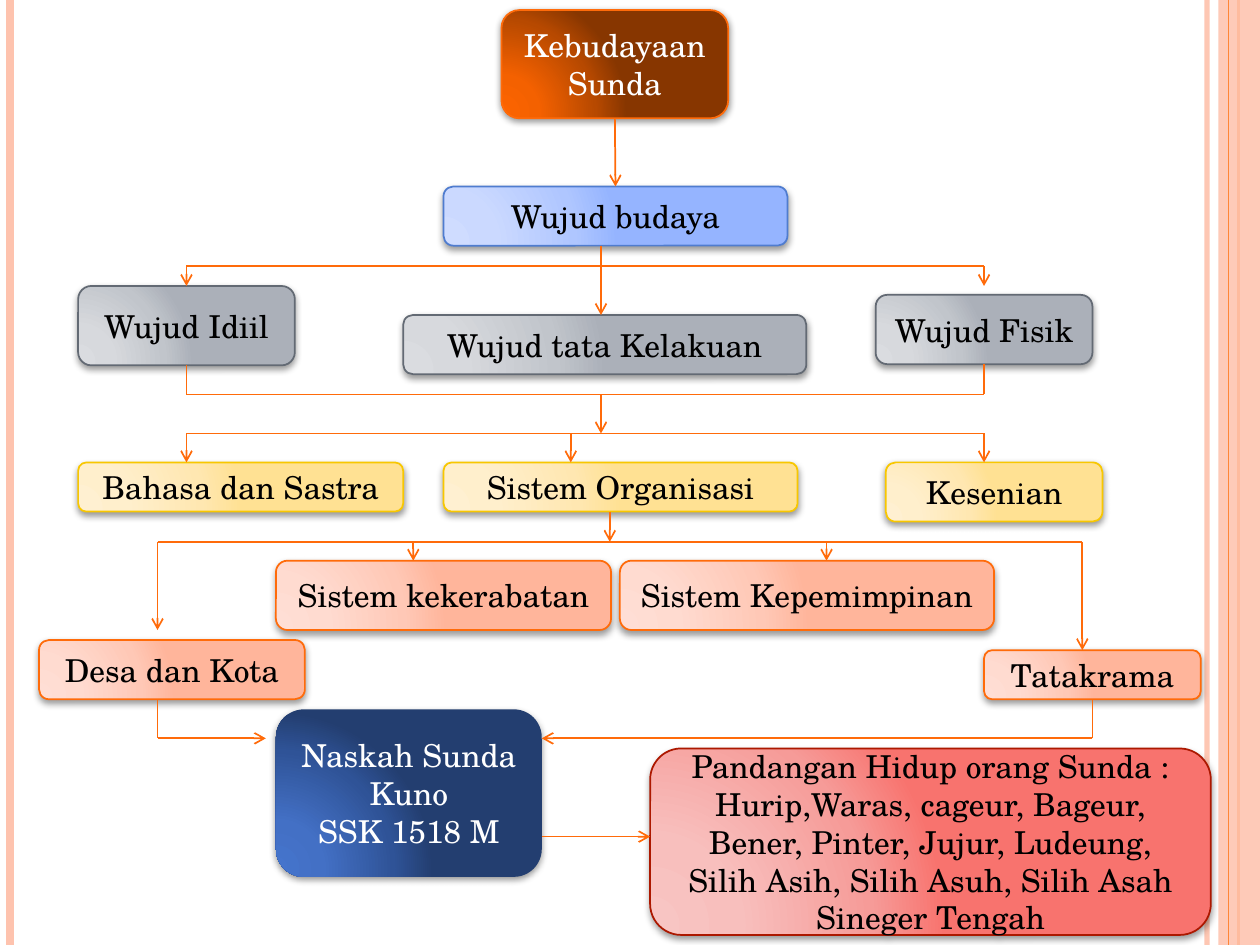
from lxml.etree import SubElement
from pptx import Presentation
from pptx.dml.color import RGBColor
from pptx.enum.shapes import MSO_CONNECTOR, MSO_SHAPE
from pptx.enum.text import MSO_ANCHOR, PP_ALIGN
from pptx.oxml import parse_xml
from pptx.oxml.ns import nsdecls, qn
from pptx.util import Pt

PX = 9144
FONT = "TeX Gyre Schola"
COLORS = {"black": "000000", "white": "FFFFFF", "orange": "FF6B0A", "pale": "FEC3AE",
          "rule": "FE8637", "blue": "4F7CCF", "gray": "636A74", "yellow": "F8C700",
          "red": "AC1800"}
GRADIENTS = {
    "brown": ["FD6400", "F46100", "B74900", "873600"],
    "blue": ["CFDCFF", "CBD9FF", "AFC6FF", "95B4FF"],
    "gray": ["DADCE0", "D7D9DD", "C1C5CB", "ABB0B9"],
    "yellow": ["FFF0D1", "FFEFCC", "FFE7B1", "FFE193"],
    "peach": ["FFDED5", "FFDBD0", "FFC8B6", "FFB59B"],
    "red": ["F8C5C3", "F8BFBD", "F69B98", "F8736E"],
    "navy": ["4574CC", "4370C5", "2F5397", "233E70"],
}
STOPS = [0, 30, 75, 100]

presentation = Presentation()
presentation.slide_width = 1000 * PX
presentation.slide_height = 750 * PX
slide = presentation.slides.add_slide(presentation.slide_layouts[6])


def add_box(text, box, gradient, line=None, color="black", shadow_alpha=40, shadow_distance=2):
    shape = slide.shapes.add_shape(MSO_SHAPE.ROUNDED_RECTANGLE, *[value * PX for value in box])
    stops = "".join(
        f'<a:gs pos="{position * 1000}"><a:srgbClr val="{value}"/></a:gs>'
        for position, value in zip(STOPS, GRADIENTS[gradient]))
    properties = shape._element.spPr
    properties.insert(2, parse_xml(
        f'<a:gradFill {nsdecls("a")} rotWithShape="1"><a:gsLst>{stops}</a:gsLst><a:path path="circle">'
        '<a:fillToRect l="5000" t="100000" r="120000" b="10000"/></a:path></a:gradFill>'))
    if line:
        shape.line.color.rgb = RGBColor.from_string(COLORS[line])
        shape.line.width = Pt(1)
    else:
        shape.line.fill.background()
    shape.shadow.inherit = False
    properties.find(qn("a:effectLst")).append(parse_xml(
        f'<a:outerShdw {nsdecls("a")} blurRad="{Pt(4)}" dist="{Pt(shadow_distance)}" dir="5400000" '
        f'rotWithShape="0"><a:srgbClr val="{COLORS["black"]}"><a:alpha val="{shadow_alpha * 1000}"/>'
        '</a:srgbClr></a:outerShdw>'))
    frame = shape.text_frame
    frame.word_wrap = True
    frame.vertical_anchor = MSO_ANCHOR.MIDDLE
    frame.text = text
    for paragraph in frame.paragraphs:
        paragraph.alignment = PP_ALIGN.CENTER
        font = paragraph.runs[0].font
        font.name = FONT
        font.size = Pt(18)
        font.color.rgb = RGBColor.from_string(COLORS[color])
    return shape


def add_line(points, color="orange", width=1, arrow=False, alpha=100, begin=None, end=None):
    connector = slide.shapes.add_connector(
        MSO_CONNECTOR.STRAIGHT, *[value * PX for value in points])
    connector.line.color.rgb = RGBColor.from_string(COLORS[color])
    connector.line.width = Pt(width)
    properties = connector._element.spPr
    if alpha < 100:
        SubElement(next(properties.iter(qn("a:srgbClr"))), qn("a:alpha"), val=str(alpha * 1000))
    if arrow:
        SubElement(properties.find(qn("a:ln")), qn("a:tailEnd"), type="arrow")
    SubElement(properties, qn("a:effectLst"))
    if begin:
        connector.begin_connect(*begin)
    if end:
        connector.end_connect(*end)


add_line((958, 0, 958, 750), color="pale", width=3, alpha=93)
add_line((8, 0, 8, 750), color="pale", width=4.5)
add_line((983, 0, 983, 750), color="rule", width=1.5)
band = slide.shapes.add_shape(MSO_SHAPE.RECTANGLE, 967 * PX, 0, 33 * PX, 750 * PX)
band.shadow.inherit = False
band.fill.solid()
band.fill.fore_color.rgb = RGBColor.from_string(COLORS["pale"])
SubElement(next(band._element.spPr.iter(qn("a:srgbClr"))), qn("a:alpha"), val="87000")
band.line.fill.background()
add_line((975, 0, 975, 750), color="rule", width=0.75)

culture = add_box("Kebudayaan Sunda", (398, 8, 180, 86), "brown", line="orange",
                  color="white", shadow_alpha=42, shadow_distance=1.6)
forms = add_box("Wujud budaya", (352, 148, 273, 47), "blue", line="blue")
physical = add_box("Wujud Fisik", (695, 234, 172, 55), "gray", line="gray")
add_box("Wujud tata Kelakuan", (320, 250, 320, 47), "gray", line="gray")
ideal = add_box("Wujud Idiil", (62, 227, 172, 63), "gray", line="gray")
for text, box in [
    ("Kesenian", (703, 367, 172, 47)),
    ("Sistem Organisasi", (352, 367, 281, 39)),
    ("Bahasa dan Sastra", (62, 367, 258, 39)),
]:
    add_box(text, box, "yellow", line="yellow")
manners = add_box("Tatakrama", (781, 516, 172, 39), "peach", line="orange")
for text, box in [
    ("Sistem Kepemimpinan", (492, 445, 297, 55)),
    ("Sistem kekerabatan", (219, 445, 266, 55)),
    ("Desa dan Kota", (31, 508, 211, 47)),
]:
    add_box(text, box, "peach", line="orange")
add_box("Pandangan Hidup orang Sunda : Hurip,Waras, cageur, Bageur, Bener, Pinter, Jujur, "
        "Ludeung, Silih Asih, Silih Asuh, Silih Asah Sineger Tengah",
        (516, 594, 445, 148), "red", line="red")
add_box("Naskah Sunda Kuno\nSSK 1518 M", (219, 563, 211, 133), "navy",
        color="white", shadow_alpha=42, shadow_distance=1.6)

add_line((488, 94, 488, 148), arrow=True, begin=(culture, 2), end=(forms, 0))
add_line((148, 211, 148, 227), arrow=True, end=(ideal, 0))
add_line((148, 290, 148, 313), begin=(ideal, 2))
add_line((781, 289, 781, 313), begin=(physical, 2))
add_line((867, 555, 867, 586), begin=(manners, 2))
add_line((125, 555, 125, 586))

for left, right, y in [(148, 781, 211), (148, 781, 313), (148, 781, 344), (125, 859, 430)]:
    add_line((left, y, right, y))

for x, top, bottom in [
    (781, 211, 227), (477, 195, 250), (477, 313, 344),
    (148, 344, 367), (453, 344, 367), (781, 344, 367), (484, 406, 430),
    (125, 430, 500), (328, 430, 445), (656, 430, 445), (859, 430, 516),
]:
    add_line((x, top, x, bottom), arrow=True)

for start, finish, y in [(867, 430, 586), (125, 211, 586), (430, 516, 664)]:
    add_line((start, y, finish, y), arrow=True)

presentation.save("out.pptx")
